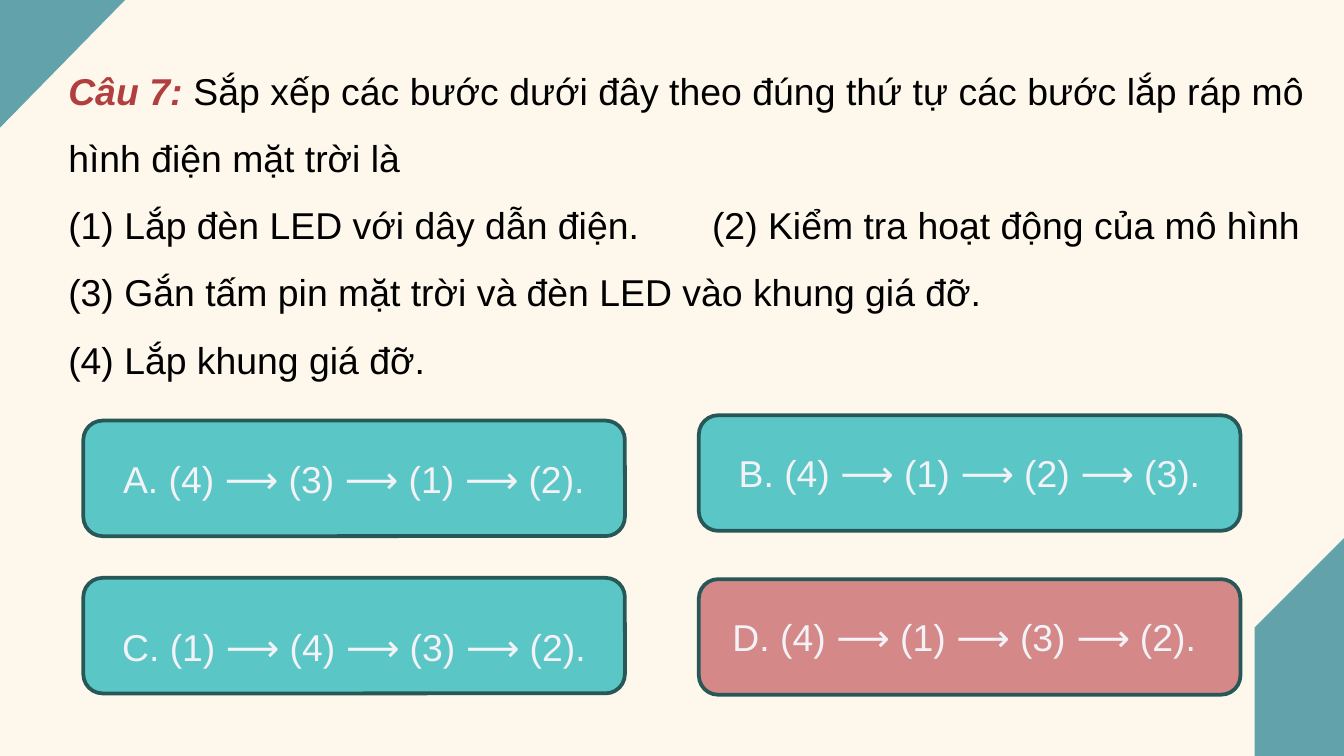
"""Build a quiz slide with one question and four answer boxes."""
from lxml.etree import SubElement
from pptx import Presentation
from pptx.dml.color import RGBColor
from pptx.enum.shapes import MSO_SHAPE as SHAPE
from pptx.enum.text import MSO_ANCHOR as ANCHOR, PP_ALIGN as ALIGN
from pptx.oxml.ns import qn
from pptx.util import Inches, Pt

COLORS = {
    "background": "FDF7EC", "corner": "62A2AA", "label": "B23F3F",
    "question": "000000", "answer": "F3F2F7", "border": "285757",
    "teal": "5BC6C6", "red": "D58888",
}
SLIDE_W = 10
SLIDE_H = SLIDE_W * 9 / 16
FONT, SIZE = "Arial", 20
LABEL = "Câu 7: "
QUESTION = [
    "Sắp xếp các bước dưới đây theo đúng thứ tự các bước lắp ráp mô hình điện mặt trời là",
    "(1) Lắp đèn LED với dây dẫn điện.\t(2) Kiểm tra hoạt động của mô hình",
    "(3) Gắn tấm pin mặt trời và đèn LED vào khung giá đỡ.",
    "(4) Lắp khung giá đỡ.",
]
LEFT, RIGHT = 0.62, 5.2
BOX_W, BOX_H = 4.03, 0.86
ANSWERS = [
    ("A. (4) ⟶ (3) ⟶ (1) ⟶ (2).", LEFT, 3.13, "teal", 1.0),
    ("B. (4) ⟶ (1) ⟶ (2) ⟶ (3).", RIGHT, 3.09, "teal", 1.0),
    ("C. (1) ⟶ (4) ⟶ (3) ⟶ (2).", LEFT, 4.3, "teal", 1.5),
    ("D. (4) ⟶ (1) ⟶ (3) ⟶ (2). ", RIGHT, 4.31, "red", 1.0),
]
CORNERS = [
    (SHAPE.RIGHT_TRIANGLE, (-0.01, 0, 0.96, 0.94), 90, ()),
    (SHAPE.SNIP_2_DIAG_RECTANGLE, (9.2, 4.07, 1.74, 1.47), 270, (0, 0.5)),
]
TAB_STOP = 4.79


def rgb(name):
    return RGBColor.from_string(COLORS[name])


def add_filled(slide, kind, box, fill):
    sp = slide.shapes.add_shape(kind, *map(Inches, box))
    sp.shadow.inherit = False
    sp.fill.solid()
    sp.fill.fore_color.rgb = rgb(fill)
    return sp


def style(r, color, emphasis=False):
    r.font.name, r.font.size = FONT, Pt(SIZE)
    r.font.color.rgb = rgb(color)
    r.font.bold = r.font.italic = emphasis


def add_corner(slide, kind, box, rotation, adjustments):
    sp = add_filled(slide, kind, box, "corner")
    sp.line.fill.background()
    sp.rotation = rotation
    for i, value in enumerate(adjustments):
        sp.adjustments[i] = value


def add_question(slide):
    tf = slide.shapes.add_textbox(*map(Inches, (0.41, 0.29, 9.4, 2.56))).text_frame
    tf.word_wrap = True
    for i, text in enumerate(QUESTION):
        p = tf.add_paragraph() if i else tf.paragraphs[0]
        p.alignment, p.line_spacing = ALIGN.JUSTIFY, 1.5
        if i == 0:
            r = p.add_run()
            r.text = LABEL
            style(r, "label", True)
        r = p.add_run()
        r.text = text
        style(r, "question")
        if "\t" in text:
            tabs = SubElement(p._p.get_or_add_pPr(), qn("a:tabLst"))
            SubElement(tabs, qn("a:tab"), pos=str(Inches(TAB_STOP)), algn="l")


def add_answer(slide, text, left, top, fill, spacing):
    sp = add_filled(slide, SHAPE.ROUNDED_RECTANGLE, (left, top, BOX_W, BOX_H), fill)
    sp.line.color.rgb = rgb("border")
    sp.line.width = Pt(2)
    tf = sp.text_frame
    tf.word_wrap, tf.vertical_anchor = True, ANCHOR.MIDDLE
    p = tf.paragraphs[0]
    p.text = text
    p.alignment, p.line_spacing = ALIGN.CENTER, spacing
    style(p.runs[0], "answer")


def main():
    prs = Presentation()
    prs.slide_width, prs.slide_height = Inches(SLIDE_W), Inches(SLIDE_H)
    s = prs.slides.add_slide(prs.slide_layouts[6])
    s.background.fill.solid()
    s.background.fill.fore_color.rgb = rgb("background")
    for corner in CORNERS:
        add_corner(s, *corner)
    add_question(s)
    for answer in ANSWERS:
        add_answer(s, *answer)
    prs.save("out.pptx")


if __name__ == "__main__":
    main()
